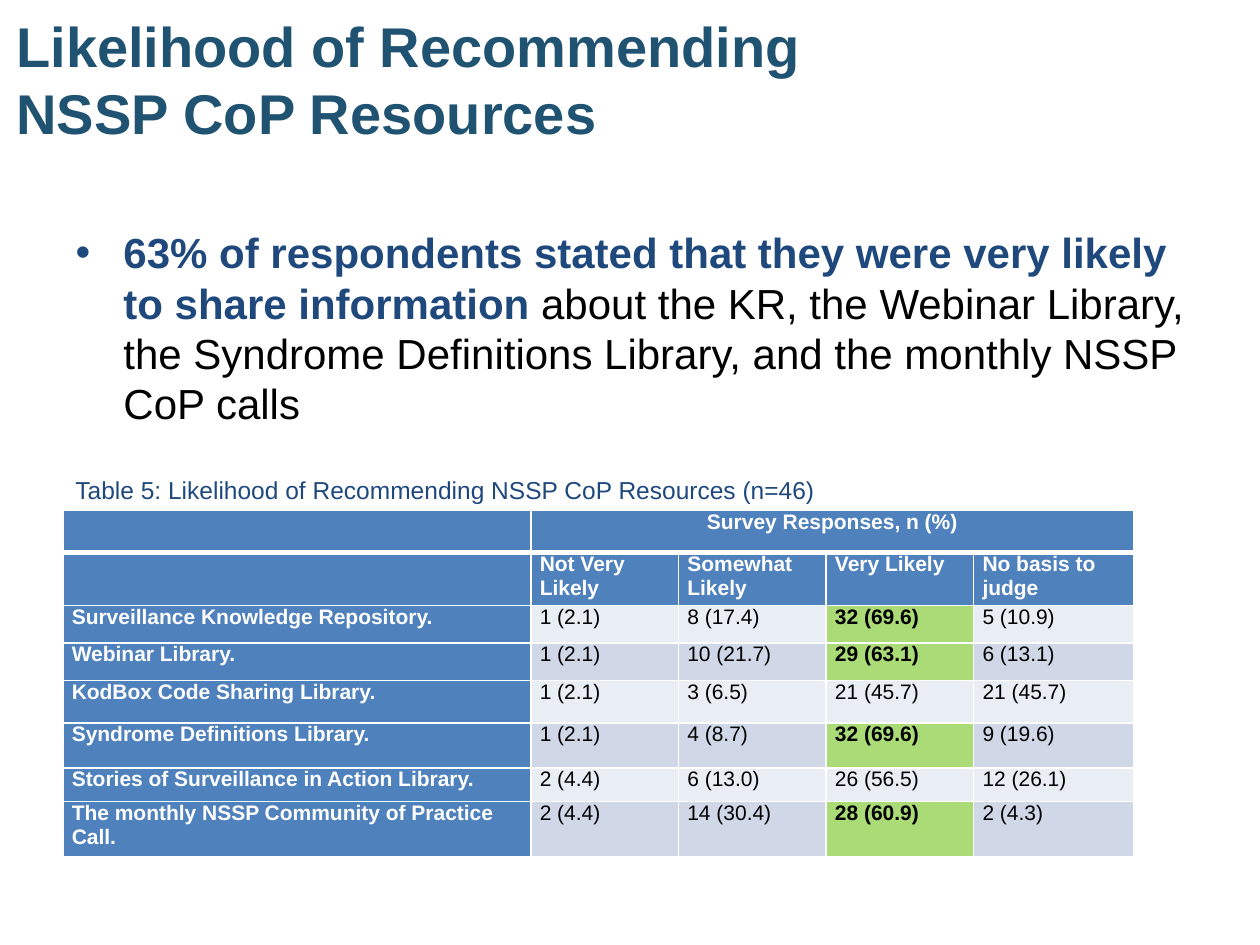
import pptx
import pptx.dml.color
import pptx.enum.text
import pptx.oxml
import pptx.oxml.ns
import pptx.util

NAVY, TEAL, BLUE, GREEN = "1F497D", "205372", "4F81BD", "ABDB77"
WHITE, BLACK = "FFFFFF", "000000"
BANDS = ["E9EDF4", "D0D8E8"]
LEFT, CENTER = pptx.enum.text.PP_ALIGN.LEFT, pptx.enum.text.PP_ALIGN.CENTER

COLUMN_WEIGHTS = [3.71, 1.17, 1.17, 1.17, 1.27]
ROW_WEIGHTS = [0.34, 0.42, 0.3, 0.3, 0.34, 0.36, 0.27, 0.44]
ANSWERS = ["", "Not Very Likely", "Somewhat Likely", "Very Likely", "No basis to judge"]
RESPONSES = [
    ["Surveillance Knowledge Repository.", "1 (2.1)", "8 (17.4)", "32 (69.6)", "5 (10.9)"],
    ["Webinar Library.", "1 (2.1)", "10 (21.7)", "29 (63.1)", "6 (13.1)"],
    ["KodBox Code Sharing Library.", "1 (2.1)", "3 (6.5)", "21 (45.7)", "21 (45.7)"],
    ["Syndrome Definitions Library.", "1 (2.1)", "4 (8.7)", "32 (69.6)", "9 (19.6)"],
    ["Stories of Surveillance in Action Library.", "2 (4.4)", "6 (13.0)", "26 (56.5)", "12 (26.1)"],
    ["The monthly NSSP Community of Practice Call.", "2 (4.4)", "14 (30.4)", "28 (60.9)", "2 (4.3)"],
]
HIGHLIGHTED = {"32 (69.6)", "29 (63.1)", "28 (60.9)"}

deck = pptx.Presentation()
deck.slide_width, deck.slide_height = pptx.util.Inches(10), pptx.util.Inches(7.5)


def color(hex_string):
    return pptx.dml.color.RGBColor.from_string(hex_string)


def share(left, top, width, height):
    """Turn percentages of the slide into a box of lengths."""
    across, down = deck.slide_width / 100, deck.slide_height / 100
    return int(left * across), int(top * down), int(width * across), int(height * down)


def place(shape, box):
    shape.left, shape.top, shape.width, shape.height = box


def write(paragraph, text, size=12, ink=BLACK, bold=False, align=LEFT):
    paragraph.alignment = align
    run = paragraph.add_run()
    run.text = text
    for font in (paragraph.font, run.font):
        font.name, font.size, font.bold = "Arial", pptx.util.Pt(size), bold
        font.color.rgb = color(ink)


def add_title(slide, box):
    title = slide.shapes.title
    place(title, box)
    frame = title.text_frame
    frame.auto_size = pptx.enum.text.MSO_AUTO_SIZE.NONE
    frame.vertical_anchor = pptx.enum.text.MSO_ANCHOR.MIDDLE
    write(frame.paragraphs[0], "Likelihood of Recommending NSSP CoP Resources",
          size=32, ink=TEAL, bold=True)


def add_finding(slide, box):
    body = slide.placeholders[1]
    place(body, box)
    body.text_frame.auto_size = pptx.enum.text.MSO_AUTO_SIZE.NONE
    finding = body.text_frame.paragraphs[0]
    finding.space_before = pptx.util.Pt(0)
    properties = finding._p.get_or_add_pPr()
    properties.set("marL", str(pptx.util.Inches(0.38)))
    properties.set("indent", str(pptx.util.Inches(-0.38)))
    properties.append(pptx.oxml.parse_xml(
        f'<a:buChar {pptx.oxml.ns.nsdecls("a")} char="•"/>'))
    write(finding, "63% of respondents stated that they were very likely to share information ",
          size=24, ink=NAVY, bold=True)
    write(finding, "about the KR, the Webinar Library, the Syndrome Definitions Library, "
          "and the monthly NSSP CoP calls", size=24)


def add_borders(cell, bottom_width=1):
    properties = cell._tc.get_or_add_tcPr()
    sides = [("lnL", 1), ("lnR", 1), ("lnT", 1), ("lnB", bottom_width)]
    for position, (side, width) in enumerate(sides):
        properties.insert(position, pptx.oxml.parse_xml(
            f'<a:{side} {pptx.oxml.ns.nsdecls("a")} w="{pptx.util.Pt(width)}">'
            f'<a:solidFill><a:srgbClr val="{WHITE}"/></a:solidFill></a:{side}>'))


def fill_cell(cell, text, fill, bottom_width=1, **format):
    cell.margin_left = cell.margin_right = pptx.util.Inches(0.07)
    cell.margin_top = cell.margin_bottom = 0
    cell.fill.solid()
    cell.fill.fore_color.rgb = color(fill)
    add_borders(cell, bottom_width)
    write(cell.text_frame.paragraphs[0], text, **format)


def add_responses(slide, box):
    table = slide.shapes.add_table(len(ROW_WEIGHTS), len(COLUMN_WEIGHTS), *box).table
    for column, weight in zip(table.columns, COLUMN_WEIGHTS):
        column.width = int(box[2] * weight / sum(COLUMN_WEIGHTS))
    for row, weight in zip(table.rows, ROW_WEIGHTS):
        row.height = int(box[3] * weight / sum(ROW_WEIGHTS))

    heading = {"fill": BLUE, "ink": WHITE, "bold": True}
    table.cell(0, 1).merge(table.cell(0, 4))
    for c, text in enumerate(["", "Survey Responses, n (%)", "", "", ""]):
        fill_cell(table.cell(0, c), text, bottom_width=3, align=CENTER, **heading)
    for c, text in enumerate(ANSWERS):
        fill_cell(table.cell(1, c), text, **heading)
    for r, (resource, *counts) in enumerate(RESPONSES):
        fill_cell(table.cell(r + 2, 0), resource, **heading)
        for c, count in enumerate(counts, 1):
            strong = count in HIGHLIGHTED
            fill_cell(table.cell(r + 2, c), count,
                      fill=GREEN if strong else BANDS[r % 2], bold=strong)


def add_caption(slide, box):
    frame = slide.shapes.add_textbox(*box).text_frame
    frame.word_wrap = True
    frame.auto_size = pptx.enum.text.MSO_AUTO_SIZE.SHAPE_TO_FIT_TEXT
    write(frame.paragraphs[0], "Table 5: Likelihood of Recommending NSSP CoP Resources (n=46)",
          size=14, ink=NAVY)


def main():
    slide = deck.slides.add_slide(deck.slide_layouts[1])
    add_title(slide, share(0.3, 0, 72.8, 16.67))
    add_finding(slide, share(5, 23.33, 90, 66))
    add_responses(slide, share(5, 54, 85, 36.67))
    add_caption(slide, share(5, 49.6, 78.6, 4.53))
    deck.save("out.pptx")


if __name__ == "__main__":
    main()
